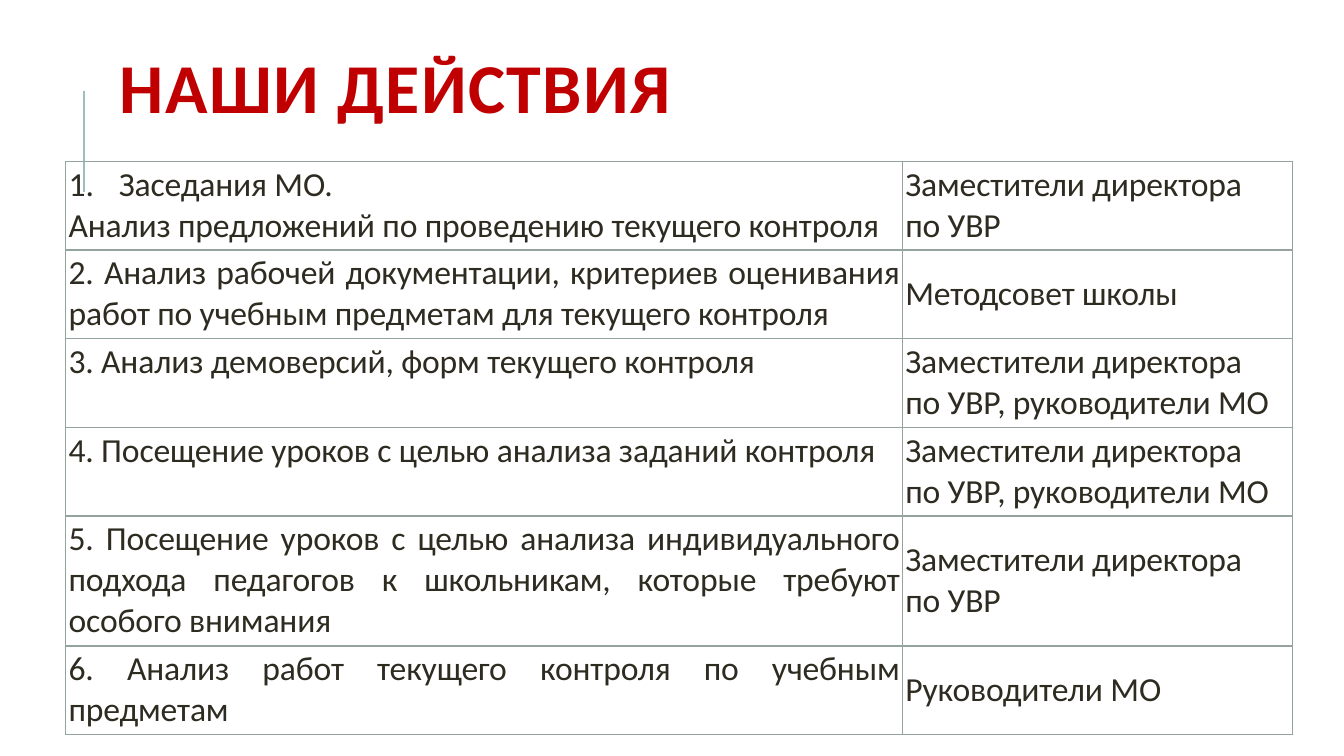
from dataclasses import dataclass

from lxml.etree import SubElement
from pptx import Presentation
from pptx.dml.color import RGBColor
from pptx.enum.shapes import MSO_CONNECTOR
from pptx.enum.text import MSO_ANCHOR, PP_ALIGN
from pptx.oxml import parse_xml
from pptx.oxml.ns import nsdecls, qn
from pptx.slide import Slide
from pptx.table import _Cell
from pptx.text.text import _Paragraph
from pptx.util import Inches, Pt

TITLE_RED = RGBColor(0xC0, 0x00, 0x00)
TEXT_DARK = RGBColor(0x2E, 0x2B, 0x21)
ACCENT_TEAL = RGBColor(0x9C, 0xBE, 0xBD)
BORDER_GREY = RGBColor(0x95, 0xA3, 0x9D)
FONT_NAME = "Calibri"
COLUMN_WIDTHS = (8.3, 3.87)


@dataclass(frozen=True)
class Action:
    tasks: tuple[str, ...]
    responsible: tuple[str, ...]
    height: float = 0.88
    auto_numbered: bool = False


DEPUTIES = "Заместители директора"
ACTIONS = (
    Action(
        ("Заседания МО.", "Анализ предложений по проведению текущего контроля"),
        (DEPUTIES, "по УВР"),
        auto_numbered=True,
    ),
    Action(
        ("2. Анализ рабочей документации, критериев оценивания работ "
         "по учебным предметам для текущего контроля",),
        ("Методсовет школы",),
    ),
    Action(
        ("3. Анализ демоверсий, форм текущего контроля",),
        (DEPUTIES, "по УВР, руководители МО"),
    ),
    Action(
        ("4. Посещение уроков с целью анализа заданий контроля",),
        (DEPUTIES, "по УВР, руководители МО"),
    ),
    Action(
        ("5. Посещение уроков с целью анализа индивидуального подхода "
         "педагогов к школьникам, которые требуют особого внимания",),
        (DEPUTIES, "по УВР"),
        height=1.29,
    ),
    Action(
        ("6. Анализ работ текущего контроля по учебным предметам",),
        ("Руководители МО",),
    ),
)


def write_paragraph(
    paragraph: _Paragraph, text: str, size: float, color: RGBColor, spacing: float
) -> None:
    paragraph.text = text
    paragraph.font.name = FONT_NAME
    paragraph.font.size = Pt(size)
    paragraph.font.color.rgb = color
    for run in paragraph.runs:
        run._r.get_or_add_rPr().set("spc", str(round(spacing * 100)))


def add_number(paragraph: _Paragraph) -> None:
    properties = paragraph._p.get_or_add_pPr()
    properties.set("marL", str(Inches(0.5)))
    properties.set("indent", str(-Inches(0.5)))
    properties.insert_element_before(
        parse_xml(f'<a:buAutoNum {nsdecls("a")} type="arabicPeriod"/>'),
        "a:tabLst", "a:defRPr", "a:extLst",
    )


def set_borders(cell: _Cell) -> None:
    properties = cell._tc.get_or_add_tcPr()
    for position, side in enumerate(("lnL", "lnR", "lnT", "lnB")):
        border = parse_xml(
            f'<a:{side} {nsdecls("a")} w="{Pt(1)}"><a:solidFill>'
            f'<a:srgbClr val="{BORDER_GREY}"/></a:solidFill></a:{side}>'
        )
        properties.insert(position, border)


def fill_cell(
    cell: _Cell, lines: tuple[str, ...], alignment: PP_ALIGN, anchor: MSO_ANCHOR
) -> None:
    cell.margin_left = cell.margin_right = cell.margin_top = Inches(0.03)
    cell.margin_bottom = Inches(0.04)
    cell.vertical_anchor = anchor
    cell.fill.background()
    set_borders(cell)
    frame = cell.text_frame
    for index, line in enumerate(lines):
        paragraph = frame.add_paragraph() if index else frame.paragraphs[0]
        write_paragraph(paragraph, line, 24, TEXT_DARK, -0.1)
        paragraph.alignment = alignment


def add_accent_line(slide: Slide) -> None:
    connector = slide.shapes.add_connector(
        MSO_CONNECTOR.STRAIGHT, Inches(0.83), Inches(1.9), Inches(0.83), Inches(0.9)
    )
    connector.line.color.rgb = ACCENT_TEAL
    connector.line.width = Pt(1.5)
    SubElement(connector._element.spPr, qn("a:effectLst"))


def add_title(slide: Slide) -> None:
    shape = slide.shapes.add_textbox(
        Inches(1.09), Inches(0.4), Inches(10.63), Inches(1.06)
    )
    frame = shape.text_frame
    frame.word_wrap = True
    frame.vertical_anchor = MSO_ANCHOR.MIDDLE
    paragraph = frame.paragraphs[0]
    write_paragraph(paragraph, "НАШИ ДЕЙСТВИЯ", 50, TITLE_RED, 1)
    paragraph.font.bold = True
    paragraph.line_spacing = 0.8


def add_action_table(slide: Slide) -> None:
    table = slide.shapes.add_table(
        len(ACTIONS), len(COLUMN_WIDTHS), Inches(0.65), Inches(1.6),
        Inches(sum(COLUMN_WIDTHS)), Inches(sum(action.height for action in ACTIONS)),
    ).table
    table.first_row = False
    table.horz_banding = False
    for column, width in zip(table.columns, COLUMN_WIDTHS):
        column.width = Inches(width)
    for row, action in zip(table.rows, ACTIONS):
        row.height = Inches(action.height)
        task_cell, responsible_cell = row.cells
        fill_cell(task_cell, action.tasks, PP_ALIGN.JUSTIFY, MSO_ANCHOR.TOP)
        fill_cell(
            responsible_cell, action.responsible, PP_ALIGN.LEFT, MSO_ANCHOR.MIDDLE
        )
        if action.auto_numbered:
            add_number(task_cell.text_frame.paragraphs[0])


def main() -> None:
    presentation = Presentation()
    presentation.slide_width = Inches(13.33)
    presentation.slide_height = Inches(7.5)
    slide = presentation.slides.add_slide(presentation.slide_layouts[6])
    add_accent_line(slide)
    add_title(slide)
    add_action_table(slide)
    presentation.save("out.pptx")


if __name__ == "__main__":
    main()
